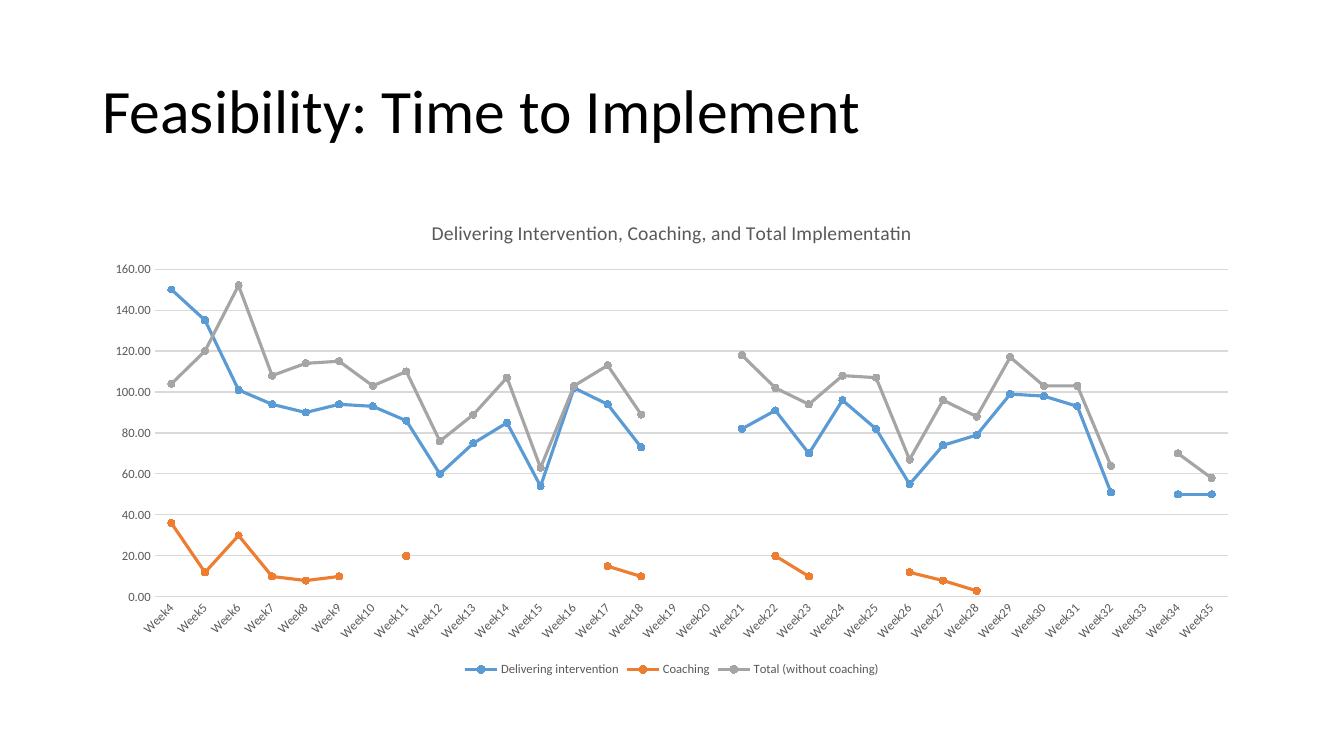
from pptx import Presentation
from pptx.chart.data import CategoryChartData
from pptx.dml.color import RGBColor
from pptx.enum.chart import (
    XL_CHART_TYPE as ChartType,
    XL_LEGEND_POSITION as LegendPosition,
    XL_MARKER_STYLE as MarkerStyle,
    XL_TICK_MARK as TickMark,
)
from pptx.enum.text import MSO_ANCHOR as Anchor, PP_ALIGN as Align
from pptx.util import Pt

FONT = "Calibri"
COLORS = {
    "title": "000000",
    "label": "595959",
    "grid": "D9D9D9",
    "Delivering intervention": "5B9BD5",
    "Coaching": "ED7D31",
    "Total (without coaching)": "A5A5A5",
}
LEFT, WIDTH = Pt(66), Pt(828)
WEEKS = [f"Week{number}" for number in range(4, 36)]

# Minutes per week; None marks a week without a record
MINUTES = {
    "Delivering intervention": [
        150, 135, 101, 94, 90, 94, 93, 86, 60, 75, 85, 54, 102, 94, 73, None,
        None, 82, 91, 70, 96, 82, 55, 74, 79, 99, 98, 93, 51, None, 50, 50],
    "Coaching": [
        36, 12, 30, 10, 8, 10, None, 20, None, None, None, None, None, 15, 10, None,
        None, None, 20, 10, None, None, 12, 8, 3] + [None] * 7,
    "Total (without coaching)": [
        104, 120, 152, 108, 114, 115, 103, 110, 76, 89, 107, 63, 103, 113, 89, None,
        None, 118, 102, 94, 108, 107, 67, 96, 88, 117, 103, 103, 64, None, 70, 58],
}


def color(name):
    return RGBColor.from_string(COLORS[name])


def set_font(font, size, color_name):
    font.name = FONT
    font.size = Pt(size)
    font.bold = False
    font.color.rgb = color(color_name)


def set_line(line, color_name, width):
    line.color.rgb = color(color_name)
    line.width = Pt(width)


def add_heading(slide, text):
    heading = slide.shapes.title
    heading.left, heading.top, heading.width, heading.height = LEFT, Pt(28.75), WIDTH, Pt(104.4)
    frame = heading.text_frame
    frame.text = text
    frame.vertical_anchor = Anchor.MIDDLE
    paragraph = frame.paragraphs[0]
    paragraph.alignment = Align.LEFT
    paragraph.line_spacing = 0.9
    set_font(paragraph.font, 44, "title")


def style_axis(axis):
    axis.major_tick_mark = axis.minor_tick_mark = TickMark.NONE
    set_font(axis.tick_labels.font, 9, "label")


def style_series(series):
    set_line(series.format.line, series.name, 2.25)
    series.smooth = False
    marker = series.marker
    marker.style = MarkerStyle.CIRCLE
    marker.size = 5
    marker.format.fill.solid()
    marker.format.fill.fore_color.rgb = color(series.name)
    set_line(marker.format.line, series.name, 0.75)


def add_time_chart(slide, title):
    data = CategoryChartData(number_format="0.00")
    data.categories = WEEKS
    for name, minutes in MINUTES.items():
        data.add_series(name, minutes)
    chart = slide.shapes.add_chart(
        ChartType.LINE_MARKERS, LEFT, Pt(143.75), WIDTH, Pt(342.6), data).chart
    set_font(chart.font, 10, "title")

    # Title and legend
    chart.has_title = True
    chart.chart_title.include_in_layout = False
    chart.chart_title.text_frame.text = title
    set_font(chart.chart_title.text_frame.paragraphs[0].font, 14, "label")
    chart.has_legend = True
    chart.legend.position = LegendPosition.BOTTOM
    chart.legend.include_in_layout = False
    set_font(chart.legend.font, 9, "label")

    # Week axis with slanted labels
    weeks = chart.category_axis
    style_axis(weeks)
    set_line(weeks.format.line, "grid", 0.75)
    for body in chart.element.xpath(".//c:catAx/c:txPr/a:bodyPr"):
        body.set("rot", "-2700000")

    # Minutes axis
    minutes_axis = chart.value_axis
    style_axis(minutes_axis)
    minutes_axis.minimum_scale, minutes_axis.maximum_scale = 0, 160
    minutes_axis.major_unit = 20
    minutes_axis.format.line.fill.background()
    minutes_axis.tick_labels.number_format = "0.00"
    minutes_axis.tick_labels.number_format_is_linked = False
    set_line(minutes_axis.major_gridlines.format.line, "grid", 0.75)

    # Series
    chart.plots[0].vary_by_categories = False
    for series in chart.plots[0].series:
        style_series(series)


def main():
    deck = Presentation()
    deck.slide_width, deck.slide_height = Pt(960), Pt(540)
    slide = deck.slides.add_slide(deck.slide_layouts[5])
    add_heading(slide, "Feasibility: Time to Implement")
    add_time_chart(slide, "Delivering Intervention, Coaching, and Total Implementatin")
    deck.save("out.pptx")


if __name__ == "__main__":
    main()
